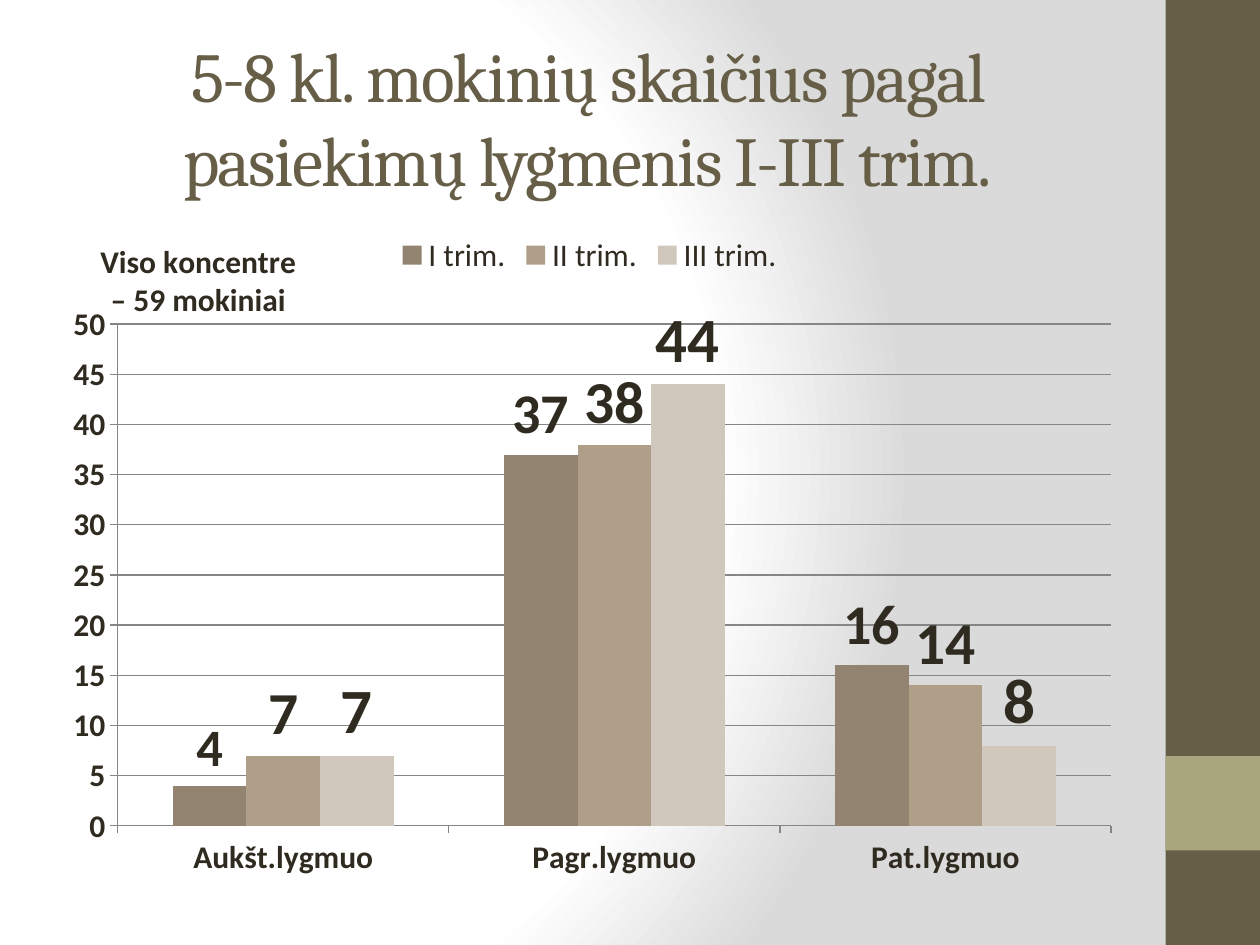
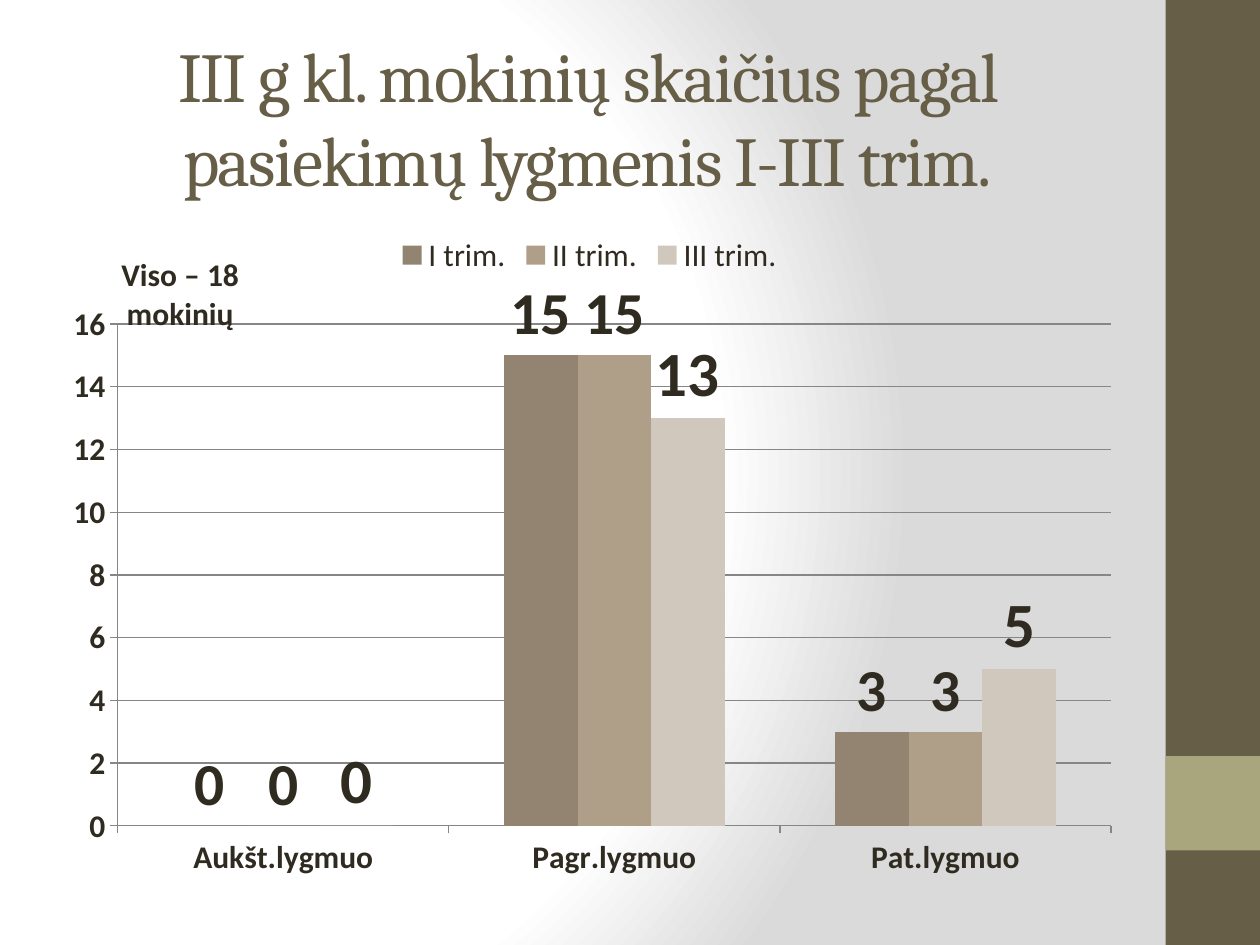
"""Build two slides that chart pupils by achievement level over three terms."""
from pptx import Presentation
from pptx.chart.data import CategoryChartData
from pptx.dml.color import RGBColor
from pptx.enum.chart import XL_CHART_TYPE as ChartType, XL_LEGEND_POSITION as LegendPos
from pptx.enum.chart import XL_LABEL_POSITION as LabelPos, XL_TICK_MARK as Tick
from pptx.enum.shapes import MSO_SHAPE as Preset
from pptx.enum.text import MSO_ANCHOR as Anchor, MSO_AUTO_SIZE as AutoSize, PP_ALIGN as Align
from pptx.oxml import parse_xml
from pptx.oxml.ns import nsdecls, qn
from pptx.util import Inches, Pt

LEVELS = ("Aukšt.lygmuo", "Pagr.lygmuo", "Pat.lygmuo")
TERMS = ("I trim.", "II trim.", "III trim.")
PUPIL_GROUPS = [
    {
        "title": "5-8 kl. mokinių skaičius pagal pasiekimų lygmenis I-III trim.",
        "total": "Viso koncentre – 59 mokiniai",
        "total_at": (0.03, 0.02),
        "counts": [(4, 37, 16), (7, 38, 14), (7, 44, 8)],
        "label_sizes": (32, 34, 36),
        "small_labels": {0: 30},
        "scale": (50, 5),
    },
    {
        "title": "III g kl. mokinių skaičius pagal pasiekimų lygmenis I-III trim.",
        "total": "Viso – 18 mokinių",
        "total_at": (0.05, 0.04),
        "counts": [(0, 15, 3), (0, 15, 3), (0, 13, 5)],
        "label_sizes": (34, 34, 36),
        "small_labels": {},
        "scale": (16, 2),
    },
]
COLORS = {
    "title": "675E47", "band": "675E47", "accent": "A9A57C", "text": "2F2B20",
    "grid": "868686", "fade_from": "FFFFFF", "fade_to": "DADADA",
    "I trim.": "938471", "II trim.": "B09F88", "III trim.": "D0C8BC",
}
WIDTH, HEIGHT = 10, 7.5
BAND = 0.75
MARGIN = 0.5
TITLE_BOX = (MARGIN, 0.3, 8.33, 1.25)
CHART_BOX = (MARGIN, 1.75, 8.36, 5.31)
PLOT_SHARE = (0.052, 0.155, 0.943, 0.75)


def rgb(part):
    return RGBColor.from_string(COLORS[part])


def inches(box):
    return [Inches(length) for length in box]


def set_font(font, size, part="text", face="Calibri", bold=False):
    font.size, font.name, font.bold = Pt(size), face, bold
    font.color.rgb = rgb(part)


def paint_background(master):
    master.background.fill.solid()
    stops = "".join(
        f'<a:gs pos="{share * 1000}"><a:srgbClr val="{COLORS[part]}"/></a:gs>'
        for share, part in ((0, "fade_from"), (75, "fade_from"), (100, "fade_to")))
    fade = parse_xml(
        f'<a:gradFill {nsdecls("a")} rotWithShape="1"><a:gsLst>{stops}</a:gsLst>'
        '<a:path path="circle"><a:fillToRect l="20000" t="50000" r="100000" b="50000"/>'
        '</a:path></a:gradFill>')
    backdrop = master.element.cSld.bg.bgPr
    backdrop.replace(backdrop[0], fade)


def add_bands(slide, master):
    left = WIDTH - BAND
    for part, box in (("band", (left, 0, BAND, HEIGHT)),
                      ("accent", (left, HEIGHT - 2 * BAND, BAND, BAND))):
        band = slide.shapes.add_shape(Preset.RECTANGLE, *inches(box))
        band.shadow.inherit = False
        band.fill.solid()
        band.fill.fore_color.rgb = rgb(part)
        band.line.fill.background()
        master.shapes.element.append(band.element)


def write_title(slide, wording):
    title = slide.shapes.title
    title.left, title.top, title.width, title.height = inches(TITLE_BOX)
    frame = title.text_frame
    frame.word_wrap, frame.auto_size = True, AutoSize.NONE
    frame.vertical_anchor = Anchor.MIDDLE
    line = frame.paragraphs[0]
    line.alignment = Align.CENTER
    run = line.add_run()
    run.text = wording
    set_font(run.font, 40, "title", "Cambria")
    run.font._element.set("spc", "-100")


def set_layout(owner, index, shares, inner=False):
    for former in owner.findall(qn("c:layout")):
        owner.remove(former)
    target = '<c:layoutTarget val="inner"/>' if inner else ""
    modes = "".join(f'<c:{axis}Mode val="edge"/>' for axis in "xy")
    lengths = "".join(f'<c:{key} val="{share}"/>' for key, share in zip("xywh", shares))
    owner.insert(index, parse_xml(
        f'<c:layout {nsdecls("c")}><c:manualLayout>{target}{modes}{lengths}'
        '</c:manualLayout></c:layout>'))


def style_axis(axis):
    axis.major_tick_mark, axis.minor_tick_mark = Tick.OUTSIDE, Tick.NONE
    set_font(axis.tick_labels.font, 18, bold=True)
    axis.format.line.color.rgb = rgb("grid")
    axis.format.line.width = Pt(0.75)


def write_total(axis, group):
    total = axis.axis_title
    run = total.text_frame.paragraphs[0].add_run()
    run.text = group["total"]
    set_font(run.font, 18, bold=True)
    body = total.element.find(".//" + qn("a:bodyPr"))
    body.set("rot", "0")
    body.set("vert", "horz")
    set_layout(total.element, 1, group["total_at"])


def style_series(series, size):
    series.format.fill.solid()
    series.format.fill.fore_color.rgb = rgb(series.name)
    series.invert_if_negative = False
    labels = series.data_labels
    labels.show_value = True
    labels.position = LabelPos.OUTSIDE_END
    set_font(labels.font, size, bold=True)


def add_level_chart(slide, group):
    pupils = CategoryChartData()
    pupils.categories = LEVELS
    for term, counts in zip(TERMS, group["counts"]):
        pupils.add_series(term, counts)
    chart = slide.shapes.add_chart(
        ChartType.COLUMN_CLUSTERED, *inches(CHART_BOX), pupils).chart
    set_font(chart.font, 18)
    chart.has_title = False
    chart.has_legend = True
    chart.legend.position = LegendPos.TOP
    chart.legend.include_in_layout = False
    set_font(chart.legend.font, 18)

    plot = chart.plots[0]
    plot.gap_width, plot.overlap, plot.vary_by_categories = 150, 0, False
    set_layout(chart.element.find(".//" + qn("c:plotArea")), 0, PLOT_SHARE, inner=True)
    for series, size in zip(plot.series, group["label_sizes"]):
        style_series(series, size)
    for level, size in group["small_labels"].items():
        label = plot.series[0].points[level].data_label
        set_font(label.font, size, bold=True)
        label.position = LabelPos.OUTSIDE_END

    style_axis(chart.category_axis)
    scale = chart.value_axis
    style_axis(scale)
    scale.minimum_scale = 0
    scale.maximum_scale, scale.major_unit = group["scale"]
    scale.has_major_gridlines = True
    scale.major_gridlines.format.line.color.rgb = rgb("grid")
    scale.major_gridlines.format.line.width = Pt(0.75)
    write_total(scale, group)


def main():
    deck = Presentation()
    deck.slide_width, deck.slide_height = Inches(WIDTH), Inches(HEIGHT)
    master = deck.slide_master
    paint_background(master)
    title_only = deck.slide_layouts.get_by_name("Title Only")
    for group in PUPIL_GROUPS:
        slide = deck.slides.add_slide(title_only)
        write_title(slide, group["title"])
        add_level_chart(slide, group)
    add_bands(slide, master)
    deck.save("out.pptx")


if __name__ == "__main__":
    main()
